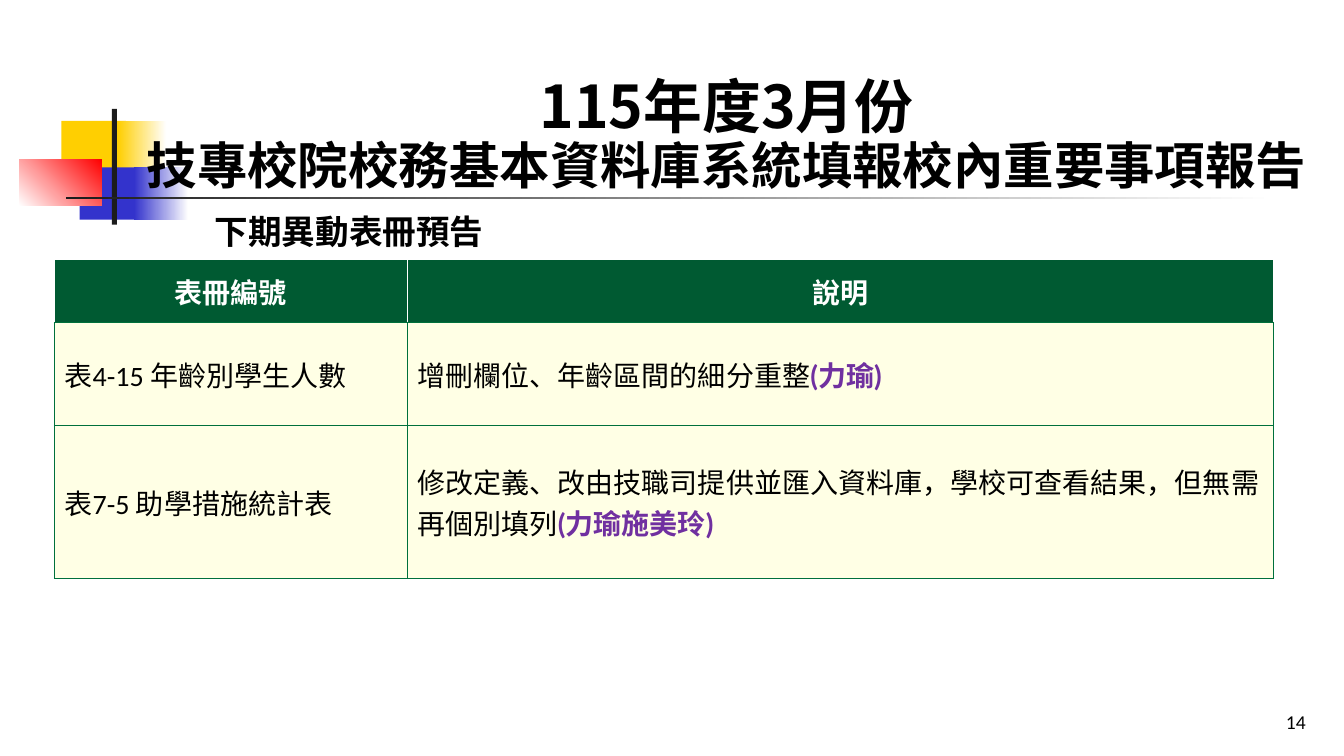
from lxml import etree
from pptx import Presentation, util as u
from pptx.dml.color import RGBColor
from pptx.enum import shapes, text
from pptx.oxml.ns import qn

CJK = "Noto Sans CJK SC"
BODY = "Calibri"
LATO = {"name": "Lato"}
NOTE = {"name": "Lato", "hue": "7030A0", "bold": True}
LEFT, MID, RIGHT = text.PP_ALIGN.LEFT, text.PP_ALIGN.CENTER, text.PP_ALIGN.RIGHT
GREEN, DARK, CREAM = "00703C", "005A32", "FFFFE5"


def color(code):
    return RGBColor.from_string(code)


class Deck:
    """Holds the style and the current slide, and draws each kind of element."""

    def __init__(self):
        self.show = Presentation()
        self.show.slide_width = u.Inches(13.33)
        self.show.slide_height = u.Inches(7.5)
        self.slide = self.show.slides.add_slide(self.show.slide_layouts[5])

    def face(self, font, name=None, size=None, hue=None, bold=None):
        if size:
            font.size = u.Pt(size)
        if hue:
            font.color.rgb = color(hue)
        if bold is not None:
            font.bold = bold
        if name:
            font.name = name
            east = etree.Element(qn("a:ea"), typeface=CJK)
            font._rPr.find(qn("a:latin")).addnext(east)

    def fill_in(self, para, runs, align=LEFT, **style):
        para.alignment = align
        self.face(para.font, **style)
        for words, extra in runs:
            run = para.add_run()
            run.text = words
            self.face(run.font, **extra)

    def place(self, shape, box):
        shape.left, shape.top, shape.width, shape.height = map(u.Inches, box)

    def block(self, box, hue, end=None, angle=0):
        shape = self.slide.shapes.add_shape(
            shapes.MSO_SHAPE.RECTANGLE, *map(u.Inches, box))
        shape.shadow.inherit = False
        shape.line.fill.background()
        if end:
            shape.fill.gradient()
            shape.fill.gradient_angle = angle
            for stop, code in zip(shape.fill.gradient_stops, (hue, end)):
                stop.color.rgb = color(code)
        else:
            shape.fill.solid()
            shape.fill.fore_color.rgb = color(hue)

    def title(self, box, first, second):
        shape = self.slide.shapes.title
        self.slide.shapes._spTree.append(shape._element)
        self.place(shape, box)
        frame = shape.text_frame
        frame.auto_size = text.MSO_AUTO_SIZE.NONE
        frame.word_wrap = True
        frame.vertical_anchor = text.MSO_ANCHOR.BOTTOM
        frame.margin_bottom = 0
        para = frame.paragraphs[0]
        para.line_spacing = 0.9
        self.fill_in(para, [(first, {"size": 42})], MID,
                     name=CJK, size=36, hue="000000", bold=True)
        para.add_line_break()
        run = para.add_run()
        run.text = second

    def label(self, box, words, align=LEFT, wrap=True,
              anchor=text.MSO_ANCHOR.TOP, **style):
        frame = self.slide.shapes.add_textbox(*map(u.Inches, box)).text_frame
        frame.word_wrap = wrap
        frame.vertical_anchor = anchor
        self.fill_in(frame.paragraphs[0], [(words, {})], align, **style)

    def edge(self, cell, sides):
        props = cell._tc.get_or_add_tcPr()
        for spot, (side, hue) in enumerate(sides.items()):
            line = etree.Element(qn("a:ln" + side), w="12700")
            fill = etree.SubElement(line, qn("a:solidFill"))
            etree.SubElement(fill, qn("a:srgbClr"), val=hue)
            props.insert(spot, line)

    def table(self, box, cols, rows, data):
        grid = self.slide.shapes.add_table(
            len(rows), len(cols), *map(u.Inches, box)).table
        grid.horz_banding = False
        for col, width in zip(grid.columns, cols):
            col.width = u.Inches(width)
        for row, height in zip(grid.rows, rows):
            row.height = u.Inches(height)
        for r, line in enumerate(data):
            head = r == 0
            rim = "FFFFFF" if head else GREEN
            for c, runs in enumerate(line):
                cell = grid.cell(r, c)
                cell.vertical_anchor = text.MSO_ANCHOR.MIDDLE
                cell.fill.solid()
                cell.fill.fore_color.rgb = color(DARK if head else CREAM)
                self.edge(cell, {"L": rim, "R": rim, "T": rim, "B": GREEN})
                self.fill_in(cell.text_frame.paragraphs[0], runs,
                             MID if head else LEFT, name=BODY, size=20,
                             hue="FFFFFF" if head else "000000", bold=head)


def main():
    deck = Deck()
    for block in (
        ((0.61, 1.2, 0.64, 0.52), "FFCF01"),
        ((1.17, 1.2, 0.48, 0.52), "FFCF01", "FFFFFF"),
        ((0.79, 1.66, 0.61, 0.52), "3333CC"),
        ((1.33, 1.66, 0.54, 0.52), "3333CC", "FFFFFF"),
        ((0.19, 1.58, 0.82, 0.46), "FFFFFF", "FF0000", 45),
        ((1.11, 1.08, 0.05, 1.15), "1C1C1C"),
        ((0.65, 1.95, 11.99, 0.03), "1C1C1C", "FFFFFF"),
    ):
        deck.block(*block)
    deck.label((10.27, 6.83, 2.78, 0.5), "14", RIGHT,
               anchor=text.MSO_ANCHOR.BOTTOM, name=BODY, size=14, hue="000000")
    deck.title((1.17, 0.52, 12.07, 1.42), "115年度3月份",
               "技專校院校務基本資料庫系統填報校內重要事項報告")
    deck.table((0.54, 2.57, 12.09, 3.17), (3.5, 8.59), (0.63, 1.02, 1.52), [
        [[("表冊編號", {})], [("說明", {})]],
        [[("表4-15 年齡別學生人數", {})],
         [("增刪欄位、", {}), ("年齡區間的細分重整", LATO), ("(力瑜)", NOTE)]],
        [[("表7-5 助學措施統計表", {})],
         [("修改定義、", LATO),
          ("改由技職司提供並匯入資料庫，學校可查看結果，但無需再個別填列", {}),
          ("(力瑜施美玲)", NOTE)]],
    ])
    deck.label((2.03, 2.04, 2.89, 0.5), "下期異動表冊預告", wrap=False,
               name=CJK, size=24, hue="000000", bold=True)
    deck.show.save("out.pptx")


if __name__ == "__main__":
    main()
